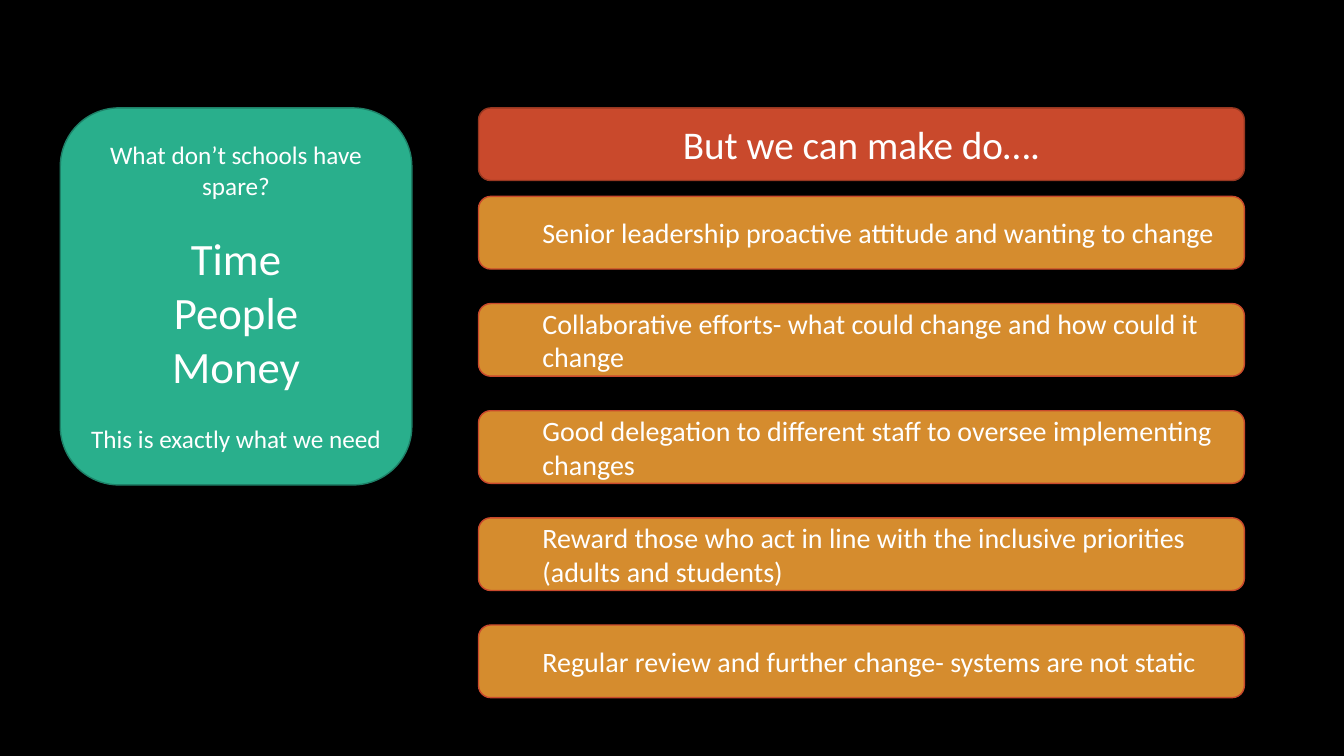
"""Build a slide on what schools lack and how they can make do."""
from pptx import Presentation
from pptx import util as u
from pptx.dml.color import RGBColor
from pptx.enum import shapes, text

COLOURS = {
    "background": "000000",
    "text": "FFFFFF",
    "green": "29AF8C",
    "dark green": "1E8168",
    "red": "C9492C",
    "dark red": "973721",
    "amber": "D58C2E",
}
LACKS = [
    ("What don’t schools have spare?", 18, 0),
    ("Time", 32, 22),
    ("People", 32, 0),
    ("Money", 32, 0),
    ("This is exactly what we need", 18, 22),
]
ACTIONS = [
    "Senior leadership proactive attitude and wanting to change",
    "Collaborative efforts- what could change and how could it change",
    "Good delegation to different staff to oversee implementing changes",
    "Reward those who act in line with the inclusive priorities (adults and students)",
    "Regular review and further change- systems are not static",
]
COLUMN_LEFT, COLUMN_WIDTH, BAR_HEIGHT = 12.06, 19.3, 1.83
HEADING_TOP, ACTIONS_TOP, ACTION_STEP = 2.72, 4.95, 2.7


def colour(name):
    """Return the named colour."""
    return RGBColor.from_string(COLOURS[name])


def apply_format(target, values):
    """Set each attribute in values on the target."""
    for name, value in values.items():
        setattr(target, name, value)


def add_box(page, left, top, width, height, fill, line):
    """Add a rounded box and return its text frame."""
    box = page.shapes.add_shape(
        shapes.MSO_SHAPE.FLOWCHART_ALTERNATE_PROCESS,
        u.Cm(left), u.Cm(top), u.Cm(width), u.Cm(height))
    box.shadow.inherit = False
    box.fill.solid()
    box.fill.fore_color.rgb = colour(fill)
    box.line.color.rgb = colour(line)
    box.line.width = u.Pt(1)
    frame = box.text_frame
    apply_format(frame, {"word_wrap": True,
                         "vertical_anchor": text.MSO_ANCHOR.MIDDLE})
    return frame


def write_para(para, wording, size, before=0, align=text.PP_ALIGN.CENTER):
    """Write one formatted paragraph."""
    apply_format(para, {"alignment": align, "space_before": u.Pt(before)})
    span = para.add_run()
    span.text = wording
    apply_format(span.font, {"name": "Calibri", "size": u.Pt(size)})
    span.font.color.rgb = colour("text")


def add_lacks(page):
    """Add the green panel of what schools lack."""
    frame = add_box(page, 1.52, HEADING_TOP, 8.86, 9.5, "green", "dark green")
    for index, (wording, size, before) in enumerate(LACKS):
        para = frame.add_paragraph() if index else frame.paragraphs[0]
        write_para(para, wording, size, before)


def add_heading(page):
    """Add the red bar above the actions."""
    frame = add_box(page, COLUMN_LEFT, HEADING_TOP, COLUMN_WIDTH, BAR_HEIGHT,
                    "red", "dark red")
    write_para(frame.paragraphs[0], "But we can make do….", 28)


def add_action(page, top, wording):
    """Add one amber bar with indented text."""
    frame = add_box(page, COLUMN_LEFT, top, COLUMN_WIDTH, BAR_HEIGHT,
                    "amber", "red")
    para = frame.paragraphs[0]
    write_para(para, wording, 20, align=text.PP_ALIGN.LEFT)
    para.level = 1
    para._p.get_or_add_pPr().set("marL", str(u.Cm(1.27)))


def main():
    """Build and save the deck."""
    deck = Presentation()
    apply_format(deck, {"slide_width": u.Cm(33.87), "slide_height": u.Cm(19.05)})
    page = deck.slides.add_slide(deck.slide_layouts.get_by_name("Blank"))
    page.background.fill.solid()
    page.background.fill.fore_color.rgb = colour("background")
    add_lacks(page)
    add_heading(page)
    for index, wording in enumerate(ACTIONS):
        add_action(page, ACTIONS_TOP + index * ACTION_STEP, wording)
    deck.save("out.pptx")


if __name__ == "__main__":
    main()
